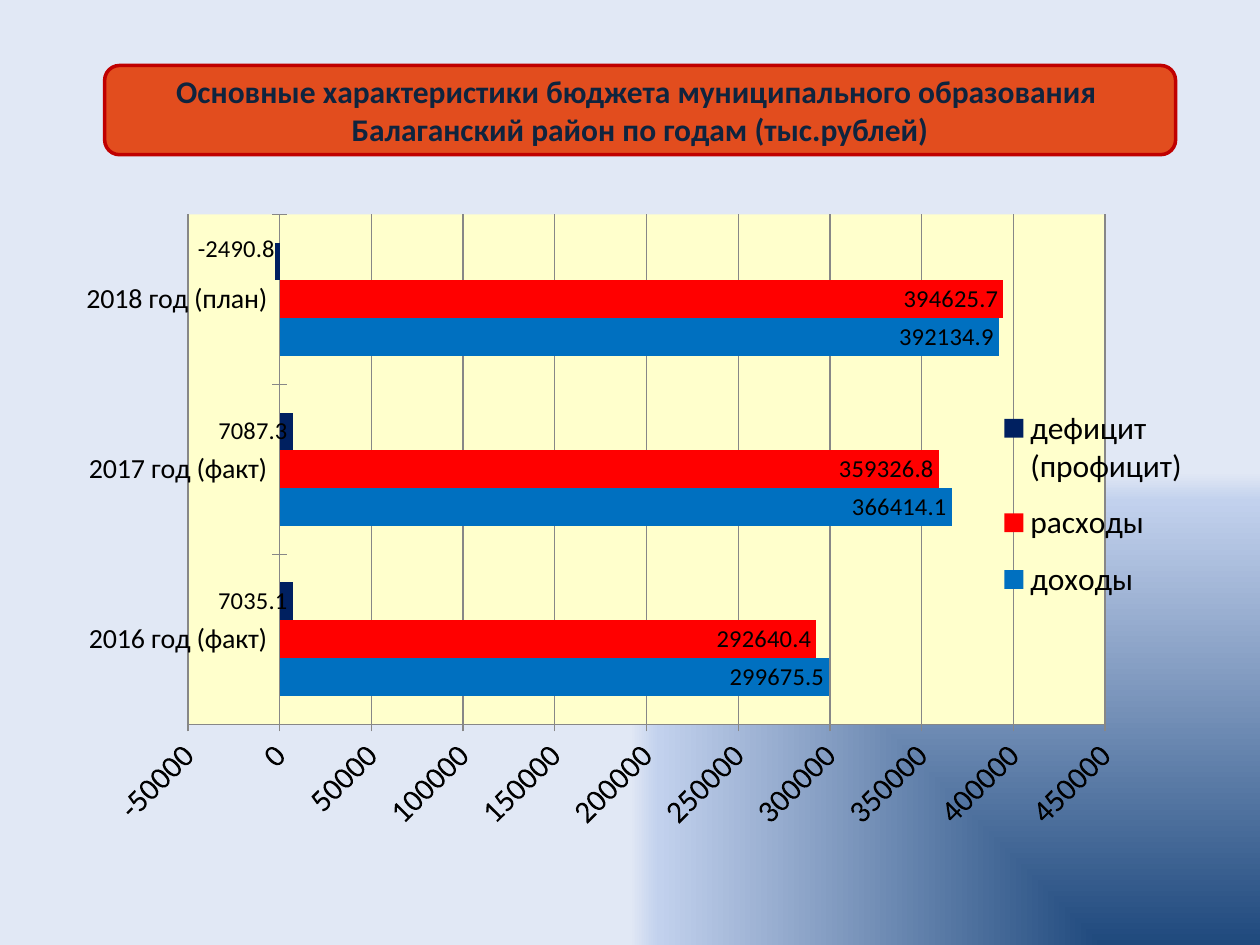
import pptx
import pptx.chart.data
import pptx.dml.color
import pptx.enum.chart
import pptx.enum.shapes
import pptx.enum.text
import pptx.oxml
import pptx.oxml.ns
import pptx.util
from lxml import etree

Cm = pptx.util.Cm
Pt = pptx.util.Pt
qn = pptx.oxml.ns.qn
COLORS = {
    "corner": "1F497D", "halo": "C2D1ED", "background": "E1E8F5",
    "banner": "E24D1E", "banner_line": "C00000", "title": "0F243E",
    "plot": "FFFFCC", "grid": "878787", "text": "000000",
    "income": "0070C0", "expenses": "FF0000", "balance": "002060",
}


def rgb(name):
    return pptx.dml.color.RGBColor.from_string(COLORS[name])


def manual_layout(inner=False, **measures):
    """Return a c:layout element with fractions of the chart area."""
    layout = etree.Element(qn("c:layout"))
    manual = etree.SubElement(layout, qn("c:manualLayout"))
    if inner:
        etree.SubElement(manual, qn("c:layoutTarget"), val="inner")
    if "w" in measures:
        for mode in ("xMode", "yMode"):
            etree.SubElement(manual, qn("c:" + mode), val="edge")
    for name, value in measures.items():
        etree.SubElement(manual, qn("c:" + name), val=str(value))
    return layout


presentation = pptx.Presentation()
presentation.slide_width = Cm(25.4)
presentation.slide_height = Cm(19.05)
slide = presentation.slides.add_slide(presentation.slide_layouts[6])

# Background: rectangular gradient from the bottom right corner
slide.background.fill.gradient()
gradient = slide.element.find(".//" + qn("a:gradFill"))
for child in list(gradient):
    gradient.remove(child)
stops = etree.SubElement(gradient, qn("a:gsLst"))
for position, name in ((0, "corner"), (94, "halo"), (100, "background")):
    stop = etree.SubElement(stops, qn("a:gs"), pos=str(position * 1000))
    etree.SubElement(stop, qn("a:srgbClr"), val=COLORS[name])
shade = etree.SubElement(gradient, qn("a:path"))
shade.set("path", "rect")
etree.SubElement(shade, qn("a:fillToRect"), l="100000", t="100000")

# Title banner
banner = slide.shapes.add_shape(
    pptx.enum.shapes.MSO_SHAPE.ROUNDED_RECTANGLE,
    Cm(2.11), Cm(1.32), Cm(21.59), Cm(1.8))
banner.shadow.inherit = False
banner.fill.solid()
banner.fill.fore_color.rgb = rgb("banner")
banner.line.color.rgb = rgb("banner_line")
banner.line.width = Pt(2)
text_frame = banner.text_frame
text_frame.word_wrap = True
text_frame.vertical_anchor = pptx.enum.text.MSO_ANCHOR.MIDDLE
title_lines = ("Основные характеристики бюджета муниципального образования ",
               "Балаганский район по годам (тыс.рублей)")
for index, line in enumerate(title_lines):
    paragraph = text_frame.add_paragraph() if index else text_frame.paragraphs[0]
    paragraph.alignment = pptx.enum.text.PP_ALIGN.CENTER
    run = paragraph.add_run()
    run.text = line
    run.font.name = "Calibri"
    run.font.size = Pt(18)
    run.font.bold = True
    run.font.color.rgb = rgb("title")

# Budget chart
budget = (
    ("доходы", (299675.5, 366414.1, 392134.9), "income"),
    ("расходы", (292640.4, 359326.8, 394625.7), "expenses"),
    ("дефицит (профицит)", (7035.1, 7087.3, -2490.8), "balance"),
)
chart_data = pptx.chart.data.CategoryChartData()
chart_data.categories = ["2016 год (факт)", "2017 год (факт)", "2018 год (план)"]
for name, values, color in budget:
    chart_data.add_series(name, values)
chart = slide.shapes.add_chart(
    pptx.enum.chart.XL_CHART_TYPE.BAR_CLUSTERED,
    Cm(0.71), Cm(3.94), Cm(23.7), Cm(12.8), chart_data).chart
chart.has_title = False
chart.font.name = "Calibri"
chart.font.size = Pt(18)
chart.font.color.rgb = rgb("text")

# Plot area
plot_area = chart.element.find(".//" + qn("c:plotArea"))
old_layout = plot_area.find(qn("c:layout"))
if old_layout is not None:
    plot_area.remove(old_layout)
plot_area.insert(0, manual_layout(inner=True, x=0.13, y=0.03, w=0.78, h=0.81))
plot_fill = etree.SubElement(
    etree.SubElement(plot_area, qn("c:spPr")), qn("a:solidFill"))
etree.SubElement(plot_fill, qn("a:srgbClr"), val=COLORS["plot"])

# Series and their value labels
plot = chart.plots[0]
plot.gap_width = 150
plot.overlap = 0
plot.vary_by_categories = False
inside_end = pptx.enum.chart.XL_LABEL_POSITION.INSIDE_END
for series, (name, values, color) in zip(plot.series, budget):
    series.format.fill.solid()
    series.format.fill.fore_color.rgb = rgb(color)
    series.invert_if_negative = False
    labels = series.data_labels
    labels.show_value = True
    labels.position = inside_end
    labels.font.size = Pt(14)

# The label of the deficit stands left of its bar
deficit_label = plot.series[2].points[2].data_label
deficit_label.font.size = Pt(14)
deficit_label.position = inside_end
label_element = plot.series[2].data_labels._element.find(qn("c:dLbl"))
label_element.find(qn("c:idx")).addnext(manual_layout(x=-0.07, y=-0.02))

# Axes
for axis in (chart.category_axis, chart.value_axis):
    axis.major_tick_mark = pptx.enum.chart.XL_TICK_MARK.CROSS
    axis.format.line.color.rgb = rgb("grid")
chart.category_axis.tick_labels.font.size = Pt(16)
value_axis = chart.value_axis
value_axis.minimum_scale = -50000
value_axis.maximum_scale = 450000
value_axis.major_unit = 50000
value_axis.has_major_gridlines = True
value_axis.major_gridlines.format.line.color.rgb = rgb("grid")
value_axis.tick_labels.font.size = Pt(18)
value_axis._element.find(".//" + qn("a:bodyPr")).set("rot", str(-45 * 60000))

# Legend
chart.has_legend = True
legend = chart.legend
legend.position = pptx.enum.chart.XL_LEGEND_POSITION.RIGHT
legend.include_in_layout = False
legend.font.size = Pt(18)
legend_element = chart.element.find(".//" + qn("c:legend"))
old_layout = legend_element.find(qn("c:layout"))
if old_layout is not None:
    legend_element.remove(old_layout)
legend_element.find(qn("c:legendPos")).addnext(
    manual_layout(x=0.81, y=0.31, w=0.18, h=0.36))

presentation.save("out.pptx")
